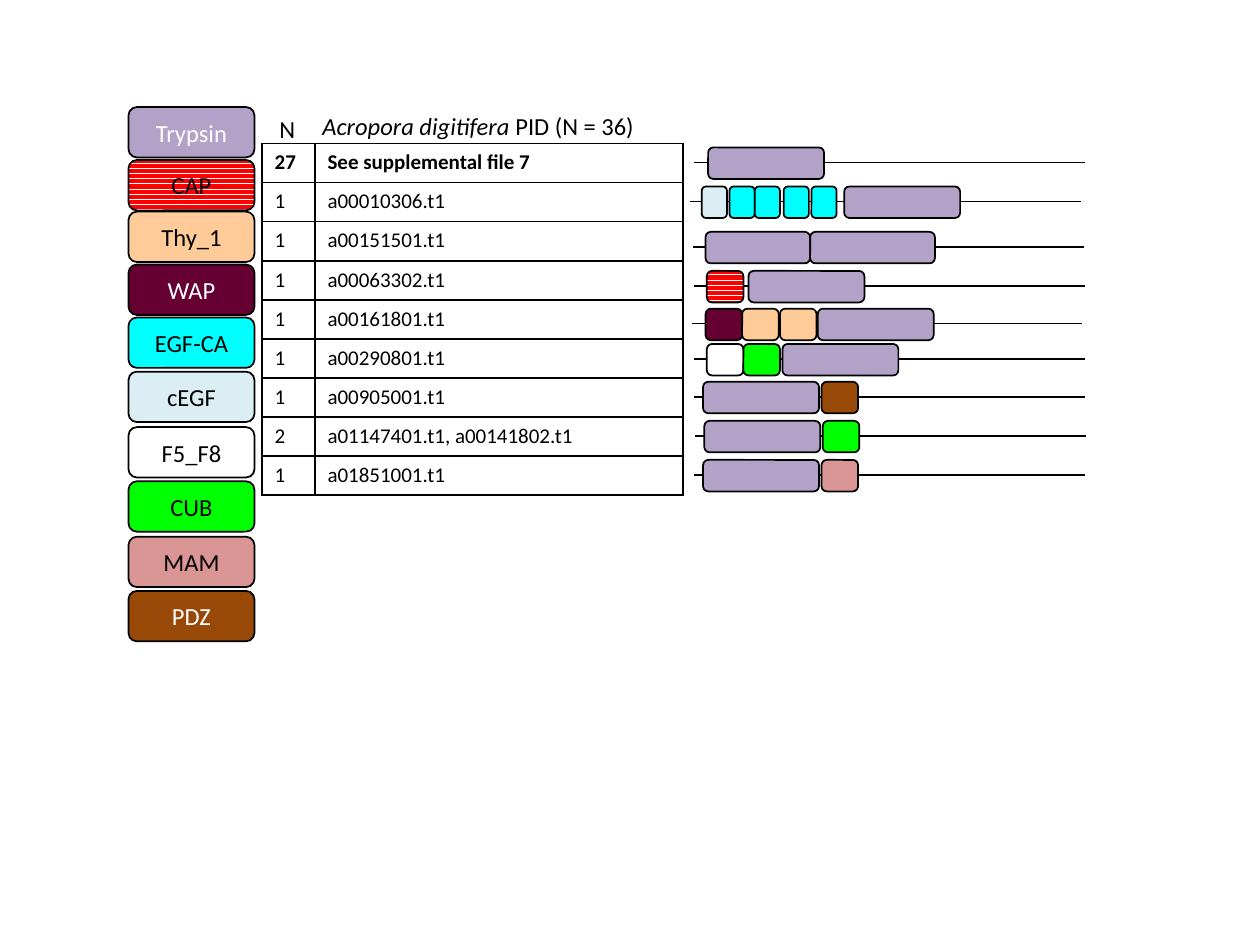
from lxml.etree import SubElement
from pptx import Presentation
from pptx.dml.color import RGBColor
from pptx.enum.dml import MSO_PATTERN
from pptx.enum.shapes import MSO_CONNECTOR, MSO_SHAPE
from pptx.enum.text import MSO_ANCHOR, MSO_AUTO_SIZE, PP_ALIGN
from pptx.oxml.ns import qn
from pptx.util import Pt

PX = 9144  # EMU per px, 100 px to the inch
FONT = "Calibri"
BLACK = RGBColor(0, 0, 0)
WHITE = RGBColor(255, 255, 255)
RED = RGBColor(255, 0, 0)
LILAC = RGBColor(0xB3, 0xA2, 0xC7)
PEACH = RGBColor(0xFF, 0xCC, 0x99)
MAROON = RGBColor(0x66, 0x00, 0x33)
CYAN = RGBColor(0x00, 0xFF, 0xFF)
PALE_BLUE = RGBColor(0xDB, 0xEE, 0xF4)
GREEN = RGBColor(0x00, 0xFF, 0x00)
ROSE = RGBColor(0xD9, 0x96, 0x94)
BROWN = RGBColor(0x98, 0x48, 0x07)

# domain: (fill, text colour, legend offset); CAP is striped
DOMAINS = {
    "Trypsin": (LILAC, WHITE, 0),
    "CAP": (RED, BLACK, 42),
    "Thy_1": (PEACH, BLACK, 83),
    "WAP": (MAROON, WHITE, 125),
    "EGF-CA": (CYAN, BLACK, 167),
    "cEGF": (PALE_BLUE, BLACK, 210),
    "F5_F8": (WHITE, BLACK, 254),
    "CUB": (GREEN, BLACK, 297),
    "MAM": (ROSE, BLACK, 341),
    "PDZ": (BROWN, WHITE, 384),
}
STRIPED = {"CAP"}

PROTEINS = [
    ("27", "See supplemental file 7"),
    ("1", "a00010306.t1"),
    ("1", "a00151501.t1"),
    ("1", "a00063302.t1"),
    ("1", "a00161801.t1"),
    ("1", "a00290801.t1"),
    ("1", "a00905001.t1"),
    ("2", "a01147401.t1, a00141802.t1"),
    ("1", "a01851001.t1"),
]

# line start x, line y, then (domain, x, width) along the line,
# all relative to the corner of the architecture region
TRACKS = [
    (3, 12, [("Trypsin", 14, 92)]),
    (0, 43, [("cEGF", 9, 20), ("EGF-CA", 31, 20), ("EGF-CA", 51, 20),
             ("EGF-CA", 74, 20), ("EGF-CA", 96, 20), ("Trypsin", 122, 92)]),
    (2, 79, [("Trypsin", 12, 83), ("Trypsin", 95, 99)]),
    (3, 110, [("CAP", 13, 29), ("Trypsin", 46, 92)]),
    (1, 140, [("WAP", 12, 29), ("Thy_1", 41, 29), ("Thy_1", 71, 29),
              ("Trypsin", 101, 92)]),
    (3, 168, [("F5_F8", 13, 29), ("CUB", 42, 29), ("Trypsin", 73, 92)]),
    (3, 198, [("Trypsin", 10, 92), ("PDZ", 104, 29)]),
    (4, 229, [("Trypsin", 11, 92), ("CUB", 105, 29)]),
    (3, 260, [("Trypsin", 10, 92), ("MAM", 104, 29)]),
]


def px(*lengths):
    return [n * PX for n in lengths]


def add_run(p, text, size, color=BLACK, bold=False, italic=False):
    r = p.add_run()
    r.text = text
    r.font.name = FONT
    r.font.size = Pt(size)
    r.font.color.rgb = color
    r.font.bold = bold
    r.font.italic = italic


def add_domain(s, name, x, y, w, h):
    sp = s.shapes.add_shape(MSO_SHAPE.ROUNDED_RECTANGLE, *px(x, y, w, h))
    sp.shadow.inherit = False
    color = DOMAINS[name][0]
    if name in STRIPED:
        sp.fill.patterned()
        sp.fill.pattern = MSO_PATTERN.DARK_HORIZONTAL
        sp.fill.fore_color.rgb = color
        sp.fill.back_color.rgb = WHITE
    else:
        sp.fill.solid()
        sp.fill.fore_color.rgb = color
    sp.line.color.rgb = BLACK
    sp.line.width = Pt(1)
    return sp


def add_legend(s, x, y, w, h):
    for name, (_, text_color, dy) in DOMAINS.items():
        tf = add_domain(s, name, x, y + dy, w, h).text_frame
        tf.vertical_anchor = MSO_ANCHOR.MIDDLE
        p = tf.paragraphs[0]
        p.alignment = PP_ALIGN.CENTER
        add_run(p, name, 14, text_color)


def add_heading(s, x, y, w, h, *runs):
    """Each run is (text, italic)."""
    tf = s.shapes.add_textbox(*px(x, y, w, h)).text_frame
    tf.word_wrap = False
    tf.auto_size = MSO_AUTO_SIZE.SHAPE_TO_FIT_TEXT
    for text, italic in runs:
        add_run(tf.paragraphs[0], text, 14, italic=italic)


def set_borders(cell):
    tcPr = cell._tc.get_or_add_tcPr()
    for i, side in enumerate(("lnL", "lnR", "lnT", "lnB")):
        ln = tcPr.makeelement(qn(f"a:{side}"), {"w": str(Pt(1))})
        fill = SubElement(ln, qn("a:solidFill"))
        SubElement(fill, qn("a:srgbClr"), val=str(BLACK))
        tcPr.insert(i, ln)


def add_protein_table(s, x, y, col_widths, row_h):
    rows = len(PROTEINS)
    box = px(x, y, sum(col_widths), rows * row_h)
    table = s.shapes.add_table(rows, len(col_widths), *box).table
    table.first_row = table.horz_banding = False
    for col, w in zip(table.columns, col_widths):
        col.width = w * PX
    for i, values in enumerate(PROTEINS):
        table.rows[i].height = row_h * PX
        for cell, text in zip(table.rows[i].cells, values):
            cell.fill.background()
            set_borders(cell)
            add_run(cell.text_frame.paragraphs[0], text, 12, bold=i == 0)


def add_architectures(s, x, y, line_w, domain_h):
    for start, line_y, domains in TRACKS:
        cy = y + line_y
        line = s.shapes.add_connector(
            MSO_CONNECTOR.STRAIGHT,
            *px(x + start, cy, x + start + line_w, cy))
        line.line.color.rgb = BLACK
        line.line.width = Pt(0.75)
        SubElement(line._element.spPr, qn("a:effectLst"))
        for name, dx, w in domains:
            add_domain(s, name, x + dx, cy - domain_h // 2, w, domain_h)


def main():
    prs = Presentation()
    prs.slide_width, prs.slide_height = px(1000, 750)
    s = prs.slides.add_slide(prs.slide_layouts[6])
    add_legend(s, 102, 85, 100, 40)
    add_heading(s, 212, 86, 33, 34, ("N", False))
    add_heading(s, 246, 83, 268, 34,
                ("Acropora digitifera ", True), ("PID (N = 36)", False))
    add_protein_table(s, 208, 114, (42, 292), 31)
    add_architectures(s, 548, 117, 310, 25)
    prs.save("out.pptx")


if __name__ == "__main__":
    main()
